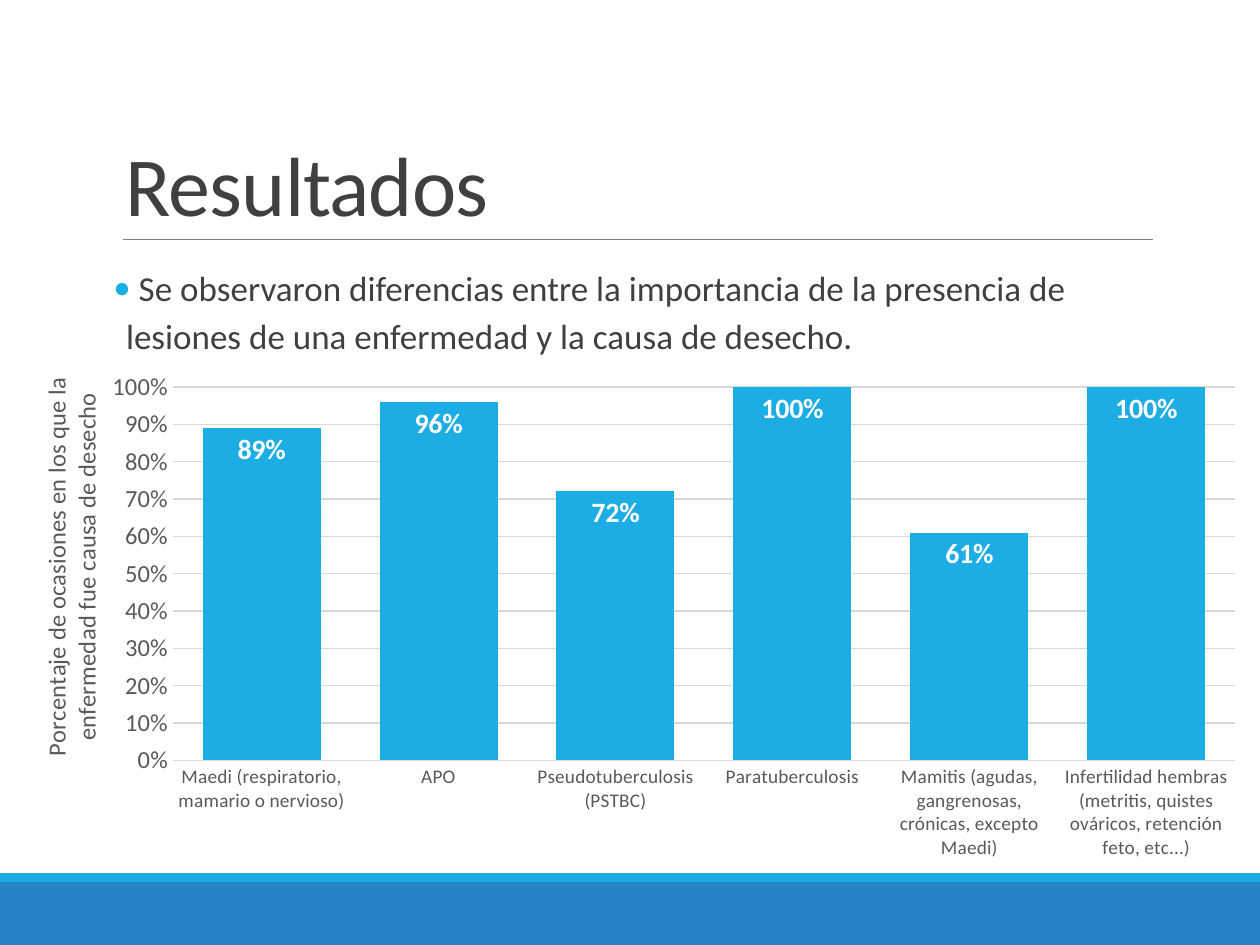
from lxml.etree import SubElement
from pptx import Presentation
from pptx.chart.data import CategoryChartData
from pptx.dml.color import RGBColor
from pptx.enum.chart import XL_CHART_TYPE, XL_LABEL_POSITION, XL_TICK_MARK
from pptx.enum.shapes import MSO_CONNECTOR, MSO_SHAPE
from pptx.enum.text import MSO_ANCHOR
from pptx.oxml import parse_xml
from pptx.oxml.ns import nsdecls, qn
from pptx.util import Inches, Pt


def color(value):
    return RGBColor.from_string(value)


def style(font, size, value, bold=False):
    for name, setting in {"name": "Calibri", "size": Pt(size), "bold": bold}.items():
        setattr(font, name, setting)
    font.color.rgb = color(value)


deck = Presentation()
deck.slide_width, deck.slide_height = Inches(10), Inches(7.5)
page = deck.slides.add_slide(deck.slide_layouts[6])

for top, height, fill in [(7, 0.5, "2683C6"), (6.93, 0.07, "1CADE4")]:
    band = page.shapes.add_shape(MSO_SHAPE.RECTANGLE, 0, Inches(top), Inches(10), Inches(height))
    band.shadow.inherit = False
    band.fill.solid()
    band.fill.fore_color.rgb = color(fill)
    band.line.fill.background()

rule = page.shapes.add_connector(
    MSO_CONNECTOR.STRAIGHT, Inches(0.98), Inches(1.9), Inches(9.15), Inches(1.9)
)
rule.line.color.rgb = color("808080")
rule.line.width = Pt(0.5)
SubElement(rule.element.spPr, qn("a:effectLst"))

texts = [
    ("Resultados", 0.31, 1.59, 48, MSO_ANCHOR.BOTTOM, 0.1,
     {"line_spacing": 0.85}),
    (" Se observaron diferencias entre la importancia de la presencia de lesiones "
     "de una enfermedad y la causa de desecho.", 2.02, 0.9, 20, MSO_ANCHOR.TOP, 0,
     {"line_spacing": 1.14, "space_before": Pt(12), "space_after": Pt(2)}),
]
spans = []
for text, top, height, size, anchor, margin, spacing in texts:
    box = page.shapes.add_textbox(Inches(0.9), Inches(top), Inches(8.25), Inches(height))
    frame = box.text_frame
    frame_format = {
        "word_wrap": True, "vertical_anchor": anchor,
        "margin_left": Inches(margin), "margin_right": Inches(margin),
    }
    for name, setting in frame_format.items():
        setattr(frame, name, setting)
    para = frame.paragraphs[0]
    for name, setting in spacing.items():
        setattr(para, name, setting)
    span = para.add_run()
    span.text = text
    style(span.font, size, "404040")
    spans.append(span)

spans[0].font._element.set("spc", "-50")
bullet = para._p.get_or_add_pPr()
bullet.set("marL", str(Inches(0.1)))
bullet.set("indent", str(Inches(-0.1)))
SubElement(SubElement(bullet, qn("a:buClr")), qn("a:srgbClr"), val="1CADE4")
SubElement(bullet, qn("a:buFont"), typeface="Calibri")
SubElement(bullet, qn("a:buChar"), char="•")

data = CategoryChartData(number_format="0%")
data.categories = [
    "Maedi (respiratorio, mamario o nervioso)",
    "APO",
    "Pseudotuberculosis (PSTBC)",
    "Paratuberculosis",
    "Mamitis (agudas, gangrenosas, crónicas, excepto Maedi)",
    "Infertilidad hembras (metritis, quistes ováricos, retención feto, etc...)",
]
data.add_series("Series 1", [0.89, 0.96, 0.72, 1, 0.61, 1])
chart = page.shapes.add_chart(
    XL_CHART_TYPE.COLUMN_CLUSTERED, Inches(0.08), Inches(2.92), Inches(9.73), Inches(3.98), data
).chart
chart.has_legend = False
chart.has_title = False
style(chart.font, 16, "000000")

plot = chart.plots[0]
plot.gap_width = 50
plot.vary_by_categories = False
series = plot.series[0]
series.format.fill.solid()
series.format.fill.fore_color.rgb = color("1CADE4")
labels = series.data_labels
label_format = {
    "show_value": True, "position": XL_LABEL_POSITION.INSIDE_END,
    "number_format": "0%", "number_format_is_linked": False,
}
for name, setting in label_format.items():
    setattr(labels, name, setting)
style(labels.font, 16, "FFFFFF", True)

for axis, size in [(chart.category_axis, 11), (chart.value_axis, 14)]:
    axis.major_tick_mark = axis.minor_tick_mark = XL_TICK_MARK.NONE
    style(axis.tick_labels.font, size, "595959")

values = chart.value_axis
values.minimum_scale, values.maximum_scale, values.major_unit = 0, 1, 0.1
values.tick_labels.number_format = "0%"
values.tick_labels.number_format_is_linked = False
values.format.line.fill.background()
for line in [chart.category_axis.format.line, values.major_gridlines.format.line]:
    line.color.rgb = color("D9D9D9")
    line.width = Pt(0.75)

title = values.axis_title
title.text_frame.text = "Porcentaje de ocasiones en los que la enfermedad fue causa de desecho"
style(title.text_frame.paragraphs[0].runs[0].font, 14, "595959")
title_body = title.text_frame._txBody.find(qn("a:bodyPr"))
title_body.set("rot", "-5400000")
title_body.set("vert", "horz")

layouts = [
    (title._element, {"xMode": "edge", "yMode": "edge", "x": 0.02, "y": 0.01}),
    (chart._chartSpace.chart.plotArea,
     {"layoutTarget": "inner", "xMode": "edge", "yMode": "edge",
      "x": 0.133, "y": 0.038, "w": 0.866, "h": 0.745}),
]
for parent, places in layouts:
    for old in parent.findall(qn("c:layout")):
        parent.remove(old)
    layout = parse_xml(f"<c:layout {nsdecls('c')}><c:manualLayout/></c:layout>")
    for name, setting in places.items():
        SubElement(layout[0], qn(f"c:{name}"), val=str(setting))
    text_part = parent.find(qn("c:tx"))
    parent.insert(0 if text_part is None else 1, layout)

deck.save("out.pptx")
